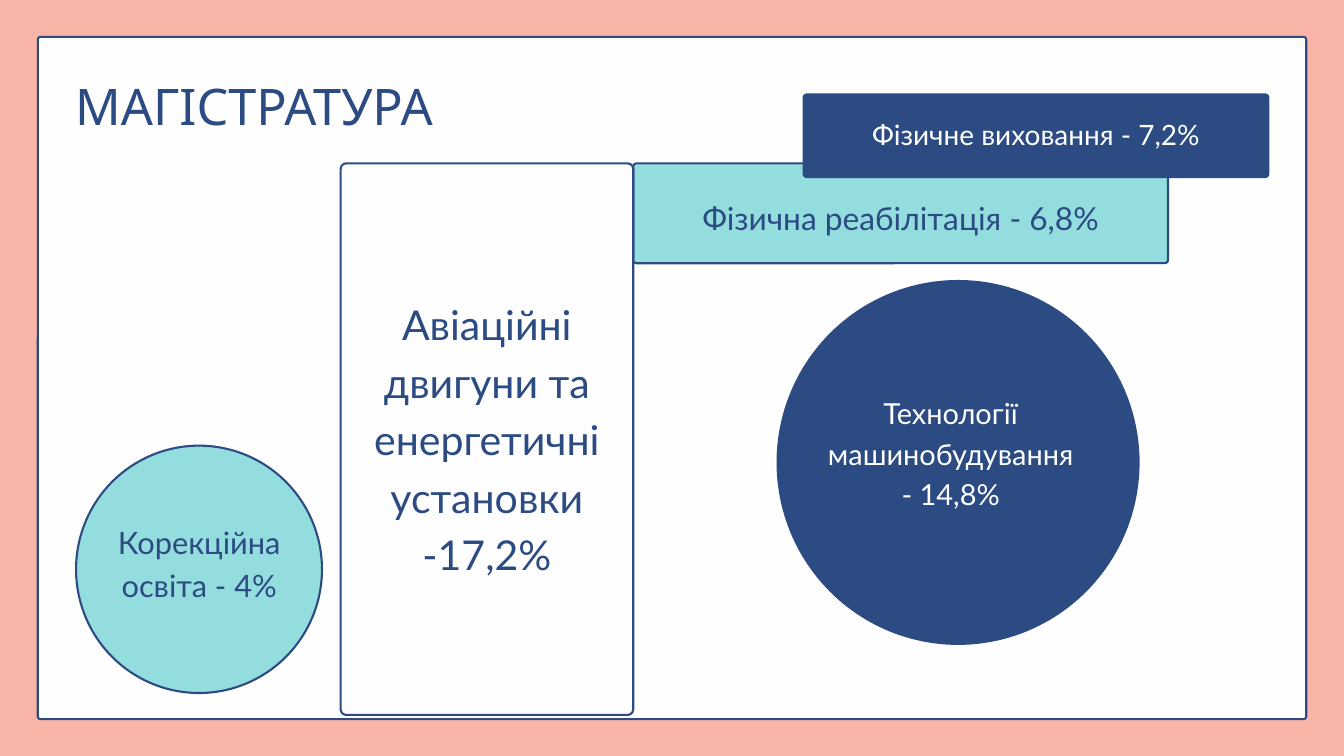
"""Build a slide that shows the share of each master's programme."""
from pptx import Presentation
from pptx.dml.color import RGBColor
from pptx.enum.shapes import MSO_SHAPE
from pptx.enum.text import MSO_ANCHOR, MSO_AUTO_SIZE, PP_ALIGN
from pptx.util import Pt

NAVY, TEAL, WHITE, PINK = "2B4B82", "94DDDE", "FEFEFE", "F7B4A7"


def color(code):
    return RGBColor.from_string(code)


class Deck:
    def __init__(self, slide, font="Lato", line=NAVY, width=2.25):
        self.slide, self.font = slide, font
        self.line, self.width = line, width

    def back(self, fill):
        paint = self.slide.background.fill
        paint.solid()
        paint.fore_color.rgb = color(fill)

    def shape(self, kind, box, fill, edge=True):
        item = self.slide.shapes.add_shape(kind, *map(Pt, box))
        item.shadow.inherit = False
        item.fill.solid()
        item.fill.fore_color.rgb = color(fill)
        if edge:
            item.line.color.rgb = color(self.line)
            item.line.width = Pt(self.width)
        else:
            item.line.fill.background()
        return item

    def panel(self, box, fill, curve, edge=True):
        item = self.shape(MSO_SHAPE.ROUNDED_RECTANGLE, box, fill, edge)
        item.adjustments[0] = curve / min(box[2:])

    def disc(self, box, fill, edge=True):
        self.shape(MSO_SHAPE.OVAL, box, fill, edge)

    def set_text(self, frame, text, size, ink, font, lead, align, anchor, inset):
        frame.word_wrap = True
        frame.auto_size = MSO_AUTO_SIZE.NONE
        frame.vertical_anchor = anchor
        frame.margin_left = frame.margin_right = Pt(inset)
        frame.margin_top = frame.margin_bottom = Pt(inset)
        frame.text = text
        para = frame.paragraphs[0]
        para.alignment = align
        para.line_spacing = Pt(lead)
        para.font.name = font
        para.font.size = Pt(size)
        para.font.color.rgb = color(ink)

    def label(self, box, text, size, ink, inset=20):
        frame = self.slide.shapes.add_textbox(*map(Pt, box)).text_frame
        self.set_text(frame, text, size, ink, self.font, size * 1.4,
                      PP_ALIGN.CENTER, MSO_ANCHOR.MIDDLE, inset)

    def title(self, box, text, size):
        item = self.slide.shapes.title
        item.left, item.top, item.width, item.height = map(Pt, box)
        self.set_text(item.text_frame, text, size, NAVY, "Karla", size * 1.2,
                      PP_ALIGN.LEFT, MSO_ANCHOR.TOP, 0)
        item.element.getparent().append(item.element)


def main():
    show = Presentation()
    show.slide_width, show.slide_height = Pt(1440), Pt(810)
    deck = Deck(show.slides.add_slide(show.slide_layouts[5]))
    deck.back(PINK)
    deck.panel((40.5, 39.5, 1359, 731), WHITE, 3)

    deck.disc((832, 300, 389, 391), NAVY, edge=False)
    deck.label((860, 309, 317, 348.5),
               "Технології машинобудування - 14,8%", 31, WHITE)

    deck.panel((678.5, 175, 573, 107), TEAL, 3.5)
    deck.label((678.5, 165.5, 573, 130),
               "Фізична реабілітація - 6,8%", 34, NAVY)

    deck.panel((860, 100, 500, 91), NAVY, 4.5, edge=False)
    deck.label((860, 91.5, 500, 99.5),
               "Фізичне виховання - 7,2%", 30, WHITE)

    deck.disc((81.5, 477.5, 263.5, 265), TEAL)
    deck.label((106, 484, 215, 234), "Корекційна освіта - 4%", 33, NAVY, 10)

    deck.panel((365, 175, 313.5, 591), WHITE, 6)
    deck.label((365, 167, 313.5, 599),
               "Авіаційні двигуни та енергетичні установки -17,2%",
               44, NAVY, 15)

    deck.title((80.5, 80.5, 598, 65), "МАГІСТРАТУРА", 54)
    show.save("out.pptx")


if __name__ == "__main__":
    main()
